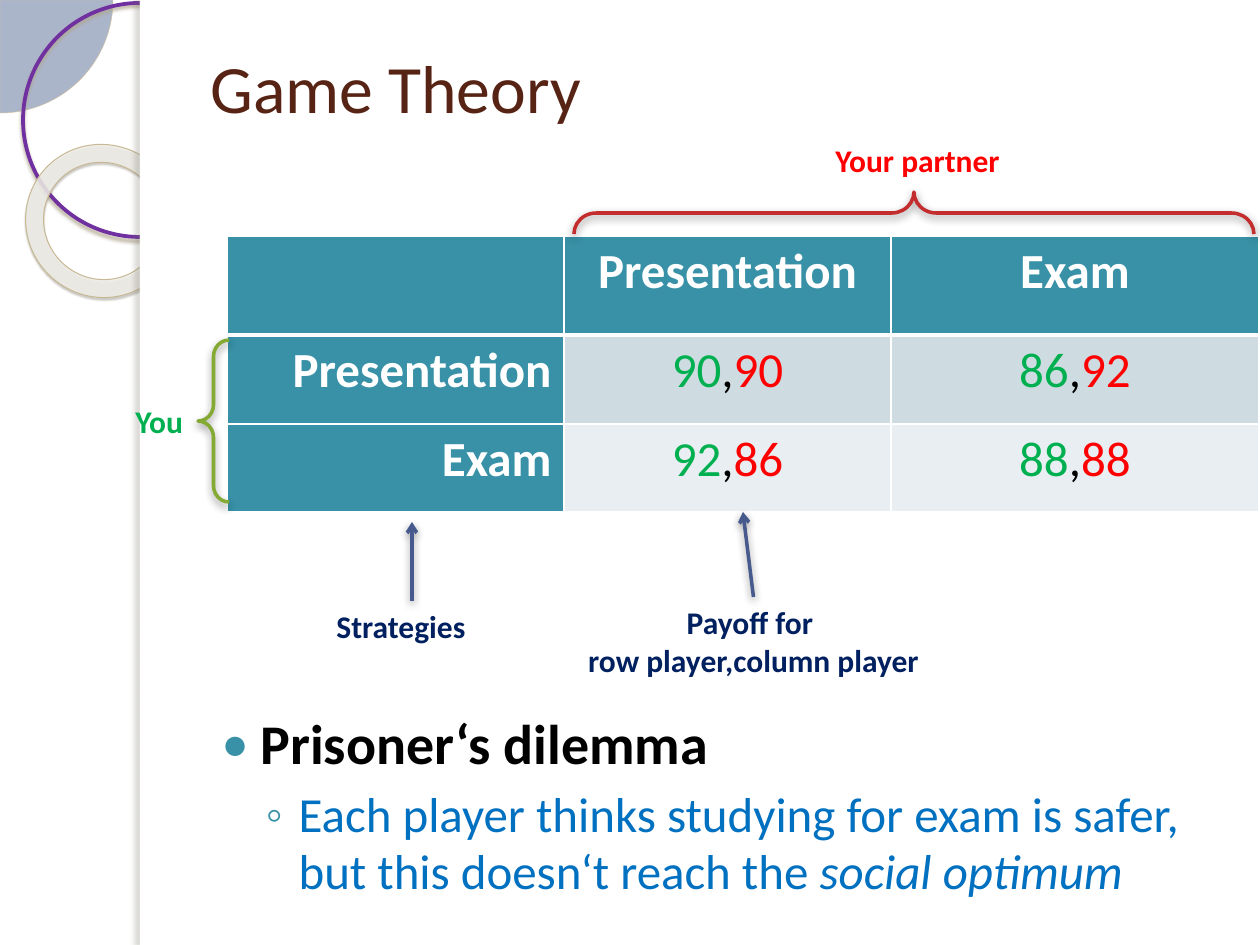
from dataclasses import dataclass

from lxml.etree import SubElement
from pptx import Presentation
from pptx.dml.color import RGBColor
from pptx.enum.shapes import MSO_CONNECTOR, MSO_SHAPE
from pptx.enum.text import MSO_ANCHOR, PP_ALIGN
from pptx.oxml.ns import qn
from pptx.util import Emu, Pt

EMU_PER_PX = 914400 / 126
GREEN, RED, NAVY, TEAL = "00B050", "FF0000", "002060", "3891A7"
BLACK, WHITE, BLUE = "000000", "FFFFFF", "0070C0"


@dataclass
class Box:
    left: int
    top: int
    width: int
    height: int

    def emu(self) -> list[Emu]:
        return [px(v) for v in (self.left, self.top, self.width, self.height)]


@dataclass
class Shadow:
    """Blur and distance in points, opacity in percent, angle in degrees."""
    color: str
    opacity: int
    blur: float
    distance: float
    angle: int


@dataclass
class Outline:
    color: str
    width: float


@dataclass
class Label:
    box: Box
    lines: list[str]
    color: str
    align: PP_ALIGN = PP_ALIGN.CENTER


SOFT_SHADOW = Shadow(BLACK, 43, 5, 2, 90)


def px(value: int) -> Emu:
    return Emu(round(value * EMU_PER_PX))


def rgb(color: str) -> RGBColor:
    return RGBColor.from_string(color)


def child(parent, tag: str, **attributes):
    return SubElement(parent, qn(tag), {k: str(v) for k, v in attributes.items()})


def set_shadow(properties, shadow: Shadow | None) -> None:
    effects = properties.find(qn("a:effectLst"))
    if effects is None:
        effects = child(properties, "a:effectLst")
    if shadow:
        outer = child(effects, "a:outerShdw", blurRad=Pt(shadow.blur), dist=Pt(shadow.distance),
                      dir=shadow.angle * 60000, algn="ctr", rotWithShape=0)
        color = child(outer, "a:srgbClr", val=shadow.color)
        child(color, "a:alpha", val=shadow.opacity * 1000)


def add_figure(slide, kind: MSO_SHAPE, box: Box, fill: str | None = None, opacity: int = 100,
               outline: Outline | None = None, shadow: Shadow | None = None,
               adjustments: tuple = (), rotation: float = 0):
    figure = slide.shapes.add_shape(kind, *box.emu())
    figure.rotation = rotation
    for index, value in enumerate(adjustments):
        figure.adjustments[index] = value
    if fill:
        figure.fill.solid()
        figure.fill.fore_color.rgb = rgb(fill)
        if opacity < 100:
            color = figure.fill._xPr.find(qn("a:solidFill"))[0]
            child(color, "a:alpha", val=opacity * 1000)
    else:
        figure.fill.background()
    if outline:
        figure.line.color.rgb = rgb(outline.color)
        figure.line.width = Pt(outline.width)
    else:
        figure.line.fill.background()
    figure.shadow.inherit = False
    set_shadow(figure._element.spPr, shadow)


def write(paragraph, text: str, size: float = 18, color: str = BLACK, bold: bool = False,
          italic: bool = False, align: PP_ALIGN = PP_ALIGN.LEFT) -> None:
    paragraph.alignment = align
    run = paragraph.add_run()
    run.text = text
    font = run.font
    font.name, font.size, font.bold, font.italic = "Calibri", Pt(size), bold, italic
    font.color.rgb = rgb(color)


def add_label(slide, label: Label):
    textbox = slide.shapes.add_textbox(*label.box.emu())
    frame = textbox.text_frame
    frame.word_wrap = True
    for index, line in enumerate(label.lines):
        paragraph = frame.add_paragraph() if index else frame.paragraphs[0]
        write(paragraph, line, color=label.color, bold=True, align=label.align)
    return textbox


def add_arrow(slide, start: tuple[int, int], end: tuple[int, int], source=None) -> None:
    arrow = slide.shapes.add_connector(MSO_CONNECTOR.STRAIGHT, *map(px, start + end))
    if source:
        arrow.begin_connect(source, 0)
    arrow.line.color.rgb = rgb("475A8D")
    arrow.line.width = Pt(2)
    child(arrow.line._get_or_add_ln(), "a:tailEnd", type="arrow")
    set_shadow(arrow._element.spPr, SOFT_SHADOW)


def style_cell(cell, fill: str, bottom: float = 1) -> None:
    properties = cell._tc.get_or_add_tcPr()
    for tag, width in (("a:lnL", 1), ("a:lnR", 1), ("a:lnT", 1), ("a:lnB", bottom)):
        border = child(properties, tag, w=Pt(width))
        child(child(border, "a:solidFill"), "a:srgbClr", val=WHITE)
    cell.fill.solid()
    cell.fill.fore_color.rgb = rgb(fill)


def add_payoff_table(slide) -> None:
    strategies = ["Presentation", "Exam"]
    payoffs = [[(90, 90), (86, 92)], [(92, 86), (88, 88)]]
    table = slide.shapes.add_table(3, 3, *Box(227, 236, 1032, 276).emu()).table
    for column, width in zip(table.columns, (337, 327, 368)):
        column.width = px(width)
    for row, height in zip(table.rows, (99, 89, 88)):
        row.height = px(height)
    style_cell(table.cell(0, 0), TEAL, bottom=3)
    for i, strategy in enumerate(strategies, start=1):
        header, side = table.cell(0, i), table.cell(i, 0)
        style_cell(header, TEAL, bottom=3)
        style_cell(side, TEAL)
        for cell, align in ((header, PP_ALIGN.CENTER), (side, PP_ALIGN.RIGHT)):
            write(cell.text_frame.paragraphs[0], strategy, 28, WHITE, bold=True, align=align)
    for i, (row_payoffs, fill) in enumerate(zip(payoffs, ("CEDCE1", "E8EEF1")), start=1):
        for j, (yours, partners) in enumerate(row_payoffs, start=1):
            cell = table.cell(i, j)
            style_cell(cell, fill)
            for text, color in ((yours, GREEN), (",", BLACK), (partners, RED)):
                write(cell.text_frame.paragraphs[0], str(text), 28, color, align=PP_ALIGN.CENTER)


def set_bullet(paragraph, char: str, margin: int, hanging: int, percent: int) -> None:
    properties = paragraph._p.get_or_add_pPr()
    properties.set("marL", str(px(margin)))
    properties.set("indent", str(-px(hanging)))
    child(child(properties, "a:buClr"), "a:srgbClr", val=TEAL)
    child(properties, "a:buSzPct", val=percent * 1000)
    child(properties, "a:buChar", char=char)
    paragraph.line_spacing = 0.97


def place(slide, placeholder, box: Box) -> None:
    """Position a placeholder and bring it to the front."""
    placeholder.left, placeholder.top, placeholder.width, placeholder.height = box.emu()
    slide.shapes._spTree.append(placeholder._element)


def add_backdrop(slide) -> None:
    add_figure(slide, MSO_SHAPE.PIE, Box(-113, -113, 226, 226), NAVY, 33,
               Outline("D3C39F", 0.25), adjustments=(0, 54))
    add_figure(slide, MSO_SHAPE.OVAL, Box(23, 3, 234, 234), outline=Outline("7030A0", 2.15),
               shadow=Shadow("B0A68F", 85, 2, 2, 90))
    add_figure(slide, MSO_SHAPE.DONUT, Box(25, 145, 155, 152), "EFEEE8", 85,
               Outline("C7B893", 0.58), Shadow("5A5444", 35, 1, 1.2, 75), (0.118,), 38.6)
    add_figure(slide, MSO_SHAPE.RECTANGLE, Box(140, 0, 1120, 945), WHITE)
    add_figure(slide, MSO_SHAPE.RECTANGLE, Box(140, 0, 10, 945), WHITE,
               shadow=Shadow("736F63", 25, 3, 3, 180))


def main() -> None:
    deck = Presentation()
    deck.slide_width, deck.slide_height = px(1260), px(945)
    slide = deck.slides.add_slide(deck.slide_layouts[1])
    title, body = slide.placeholders
    add_backdrop(slide)

    place(slide, title, Box(198, 38, 1033, 97))
    title.text_frame.vertical_anchor = MSO_ANCHOR.MIDDLE
    write(title.text_frame.paragraphs[0], "Game Theory", 38.7, "572314")

    add_payoff_table(slide)
    for box, color, rotation in ((Box(893, -127, 42, 680), "C32D2E", 270),
                                 (Box(198, 340, 31, 162), "84AA33", 180)):
        add_figure(slide, MSO_SHAPE.RIGHT_BRACE, box, outline=Outline(color, 2),
                   shadow=SOFT_SHADOW, adjustments=(0.53, 0.5), rotation=rotation)

    add_label(slide, Label(Box(823, 135, 228, 50), ["Your partner"], RED, PP_ALIGN.LEFT))
    add_label(slide, Label(Box(123, 396, 83, 50), ["You"], GREEN, PP_ALIGN.LEFT))
    add_label(slide, Label(Box(282, 601, 238, 50), ["Strategies"], NAVY))
    payoff = add_label(slide, Label(Box(520, 597, 467, 89),
                                    ["Payoff for ", "row player,column player"], NAVY))
    add_arrow(slide, (412, 601), (412, 522))
    add_arrow(slide, (753, 597), (743, 512), source=payoff)

    place(slide, body, Box(198, 706, 1033, 239))
    dilemma = body.text_frame.paragraphs[0]
    set_bullet(dilemma, "●", 50, 39, 80)
    dilemma.space_before = Pt(0)
    write(dilemma, "Prisoner‘s dilemma", 32, bold=True)
    reason = body.text_frame.add_paragraph()
    reason.level = 1
    set_bullet(reason, "◦", 88, 33, 100)
    reason.space_before = Pt(5.5)
    write(reason, "Each player thinks studying for exam is safer, "
                  "but this doesn‘t reach the ", 28, BLUE)
    write(reason, "social optimum", 28, BLUE, italic=True)

    deck.save("out.pptx")


if __name__ == "__main__":
    main()
